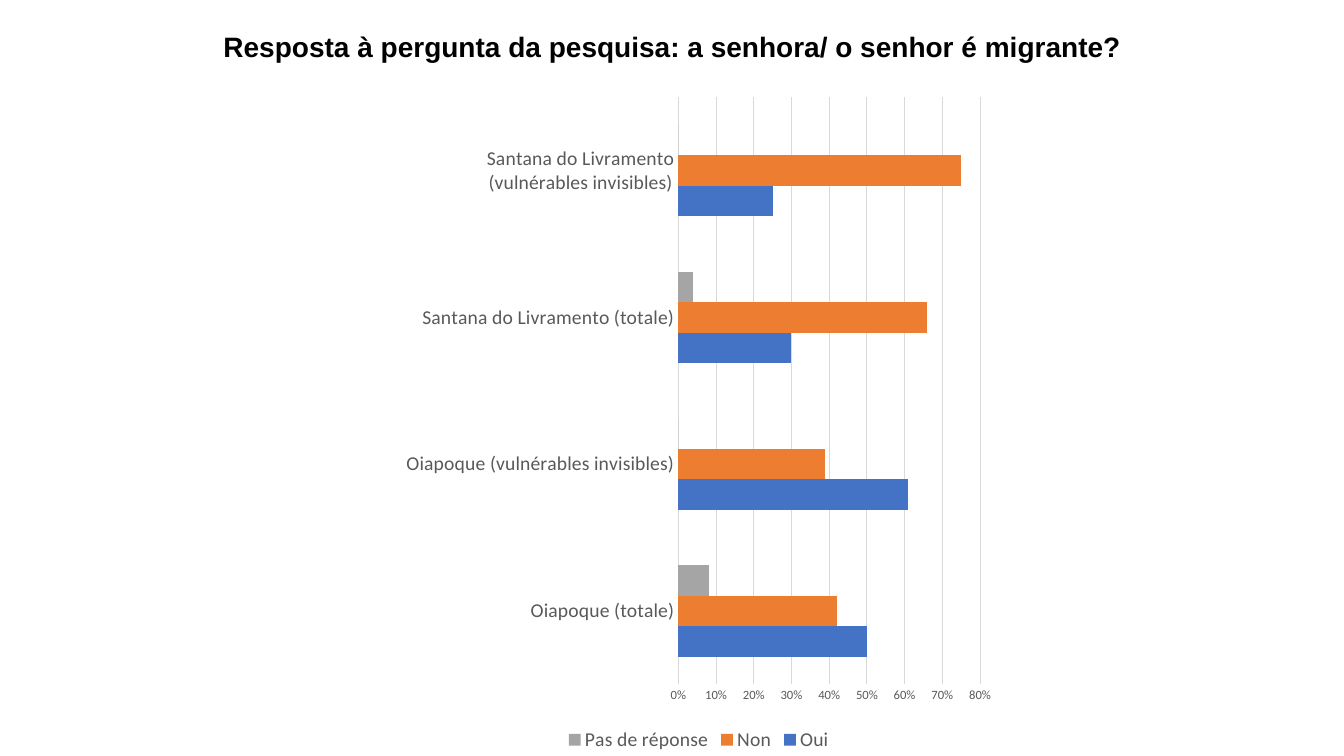
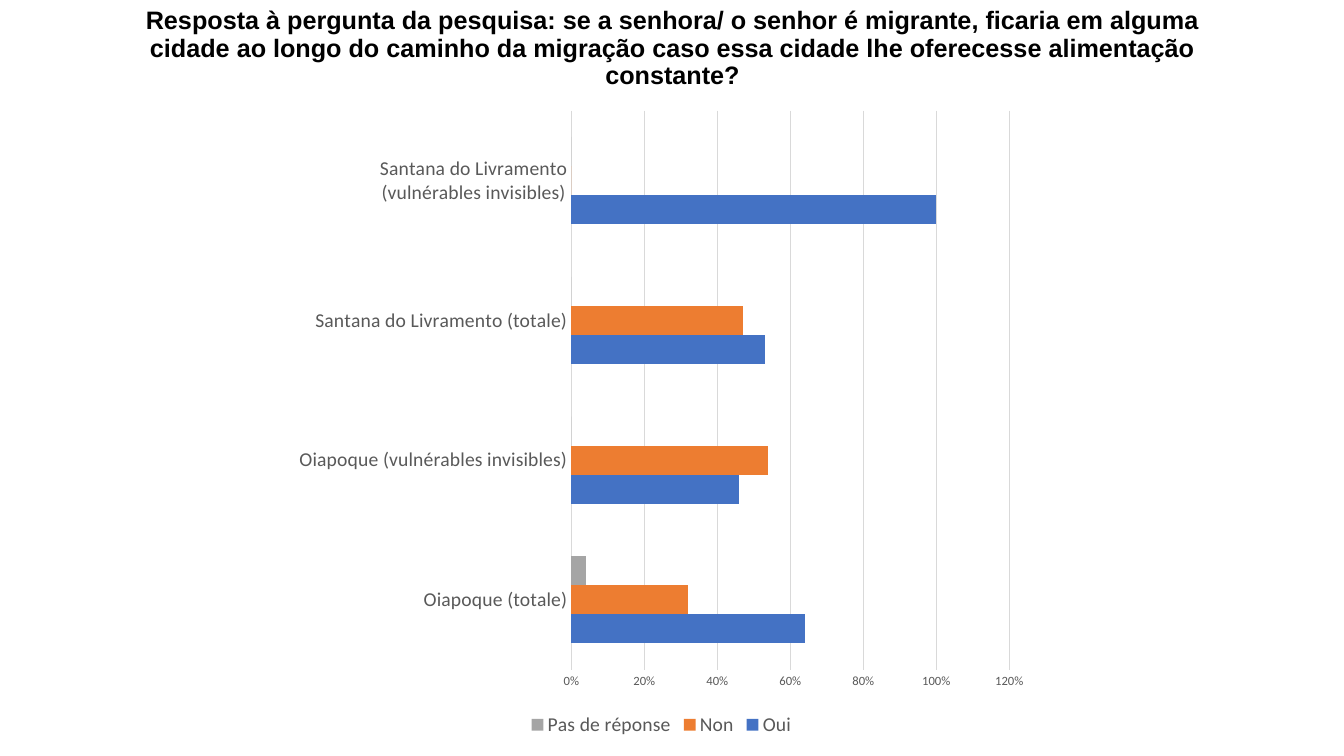
from typing import Any, NamedTuple

from pptx import Presentation
from pptx.chart.data import CategoryChartData
from pptx.dml.color import RGBColor
from pptx.enum.chart import XL_CHART_TYPE, XL_LEGEND_POSITION, XL_TICK_MARK
from pptx.enum.text import MSO_ANCHOR, PP_ALIGN
from pptx.util import Inches, Pt

BARS = XL_CHART_TYPE.BAR_CLUSTERED
BOTTOM = XL_LEGEND_POSITION.BOTTOM
NO_TICK = XL_TICK_MARK.NONE
MIDDLE = MSO_ANCHOR.MIDDLE
CENTER = PP_ALIGN.CENTER

# Shared style
COLORS = {
    "title": "000000",
    "label": "595959",
    "grid": "D9D9D9",
    "Oui": "4472C4",
    "Non": "ED7D31",
    "Pas de réponse": "A5A5A5",
}
TITLE = {"name": "Arial", "bold": True}
CHART = {"name": "Calibri", "size": Pt(10), "bold": False}
LABEL = {"name": "Calibri", "size": Pt(14), "bold": False}
SCALE = {"name": "Calibri", "size": Pt(9), "bold": False}
PLOT = {"gap_width": 182, "overlap": 0, "vary_by_categories": False}
TITLE_BOX = (0.92, 0.15, 11.5, 0.67)
GROUPS = (
    "Oiapoque (totale)",
    "Oiapoque (vulnérables invisibles)",
    "Santana do Livramento (totale)",
    "Santana do Livramento (vulnérables invisibles)",
)


class Survey(NamedTuple):
    title: str
    size: int
    box: tuple[float, float, float, float]
    votes: dict[str, tuple[float, ...]]


SURVEYS = (
    Survey(
        "Resposta à pergunta da pesquisa: a senhora/ o senhor é migrante?",
        20,
        (3.91, 0.83, 6.04, 6.67),
        {
            "Oui": (0.5, 0.61, 0.3, 0.25),
            "Non": (0.42, 0.39, 0.66, 0.75),
            "Pas de réponse": (0.08, 0, 0.04, 0),
        },
    ),
    Survey(
        "Resposta à pergunta da pesquisa: se a senhora/ o senhor é migrante, "
        "ficaria em alguma cidade ao longo do caminho da migração caso essa "
        "cidade lhe oferecesse alimentação constante?",
        18,
        (2.82, 0.97, 7.48, 6.38),
        {
            "Oui": (0.64, 0.46, 0.53, 1),
            "Non": (0.32, 0.54, 0.47, 0),
            "Pas de réponse": (0.04, 0, 0, 0),
        },
    ),
)


def color(key: str) -> RGBColor:
    return RGBColor.from_string(COLORS[key])


def apply(item: Any, style: dict[str, Any]) -> None:
    for name, value in style.items():
        setattr(item, name, value)


def set_font(font: Any, style: dict[str, Any], key: str) -> None:
    apply(font, style)
    font.color.rgb = color(key)


def set_line(line: Any) -> None:
    line.color.rgb = color("grid")
    line.width = Pt(0.75)


def add_title(slide: Any, survey: Survey) -> None:
    frame = slide.shapes.add_textbox(*map(Inches, TITLE_BOX)).text_frame
    apply(frame, {"word_wrap": True, "vertical_anchor": MIDDLE})
    para = frame.paragraphs[0]
    apply(para, {"alignment": CENTER, "line_spacing": 0.9})
    run = para.add_run()
    run.text = survey.title
    set_font(run.font, TITLE | {"size": Pt(survey.size)}, "title")


def add_bars(slide: Any, survey: Survey) -> None:
    data = CategoryChartData(number_format="0%")
    data.categories = GROUPS
    for name, values in survey.votes.items():
        data.add_series(name, values)
    chart = slide.shapes.add_chart(BARS, *map(Inches, survey.box), data).chart
    apply(chart, {"has_title": False, "has_legend": True})
    set_font(chart.font, CHART, "title")

    # Bars
    plot = chart.plots[0]
    apply(plot, PLOT)
    for series in plot.series:
        series.format.fill.solid()
        series.format.fill.fore_color.rgb = color(series.name)

    # Axes
    groups, scale = chart.category_axis, chart.value_axis
    for axis, style in ((groups, LABEL), (scale, SCALE)):
        apply(axis, {"major_tick_mark": NO_TICK, "minor_tick_mark": NO_TICK})
        set_font(axis.tick_labels.font, style, "label")
    groups.has_major_gridlines = False
    set_line(groups.format.line)
    scale.format.line.fill.background()
    set_line(scale.major_gridlines.format.line)
    apply(scale.tick_labels,
          {"number_format": "0%", "number_format_is_linked": False})

    # Legend
    apply(chart.legend, {"position": BOTTOM, "include_in_layout": False})
    set_font(chart.legend.font, LABEL, "label")


def main() -> None:
    deck = Presentation()
    apply(deck, {"slide_width": Inches(13.33), "slide_height": Inches(7.5)})
    blank = deck.slide_layouts[6]
    for survey in SURVEYS:
        slide = deck.slides.add_slide(blank)
        add_title(slide, survey)
        add_bars(slide, survey)
    deck.save("out.pptx")


if __name__ == "__main__":
    main()
